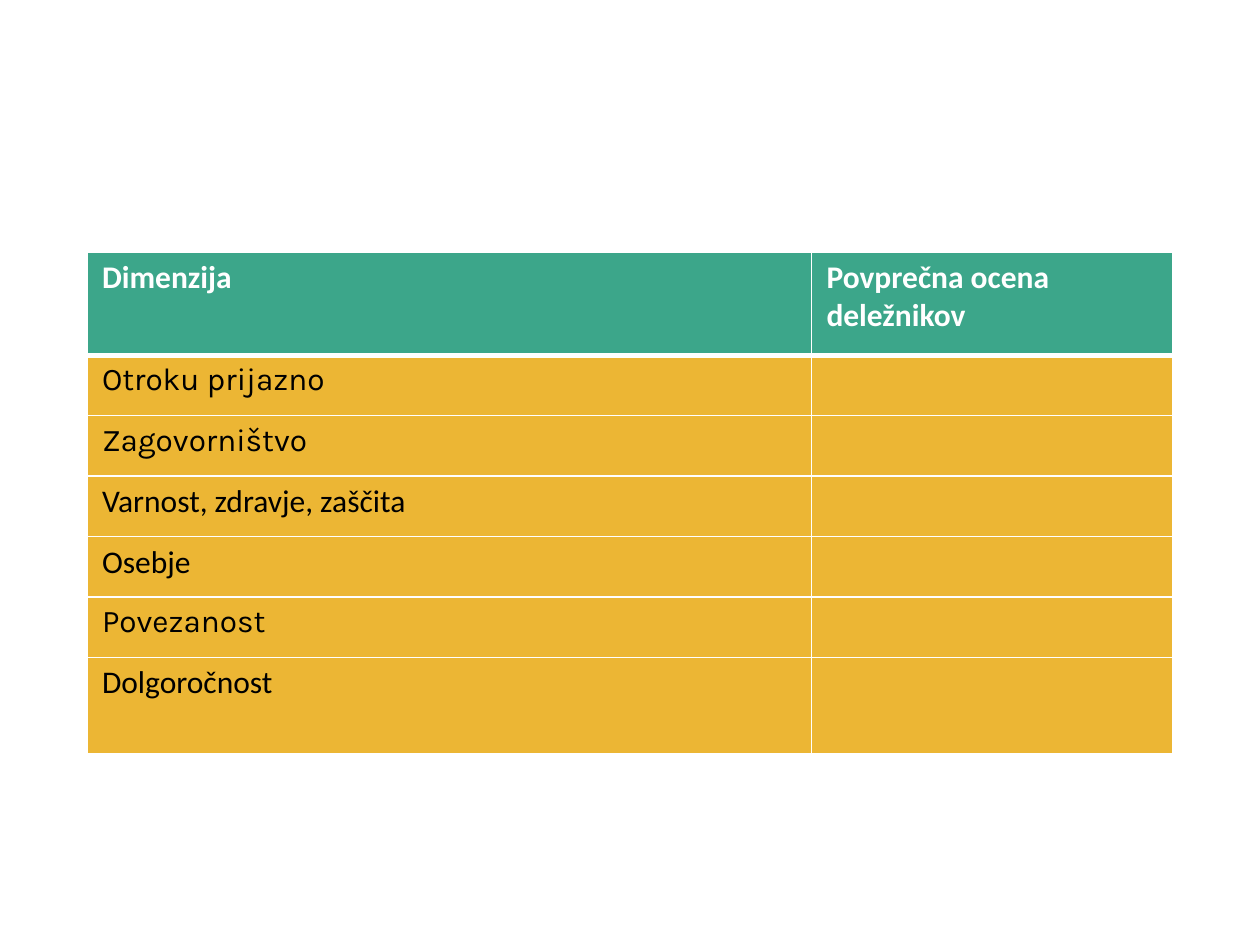
from lxml import etree
from pptx import Presentation
from pptx import util as u
from pptx.dml.color import RGBColor
from pptx.oxml import ns

WHITE = RGBColor(0xFF, 0xFF, 0xFF)
BLACK = RGBColor(0, 0, 0)
GREEN = RGBColor(0x3C, 0xA6, 0x8A)
AMBER = RGBColor(0xEC, 0xB6, 0x34)


def write(cell, words, face="Calibri", color=BLACK, bold=False):
    para = cell.text_frame.paragraphs[0]
    para.text = words
    para.font.name = face
    para.font.size = u.Pt(18)
    para.font.bold = bold
    para.font.color.rgb = color
    for run in para.runs:
        run.font.name = face
        run.font.size = u.Pt(18)
        run.font.bold = bold
        run.font.color.rgb = color


def edge(cell, side, width):
    props = cell._tc.get_or_add_tcPr()
    line = etree.SubElement(props, ns.qn("a:ln" + side), w=str(u.Pt(width)))
    fill = etree.SubElement(line, ns.qn("a:solidFill"))
    etree.SubElement(fill, ns.qn("a:srgbClr"), val=str(WHITE))


# Slide
deck = Presentation()
deck.slide_width, deck.slide_height = u.Inches(10), u.Inches(7.5)
slide = deck.slides.add_slide(deck.slide_layouts[6])

# Rows: dimension, rating, font
rows = [
    ("Dimenzija", "Povprečna ocena deležnikov", "Calibri"),
    ("Otroku prijazno", "", "Karla"),
    ("Zagovorništvo", "", "Karla"),
    ("Varnost, zdravje, zaščita", "", "Calibri"),
    ("Osebje", "", "Calibri"),
    ("Povezanost", "", "Karla"),
    ("Dolgoročnost", "", "Calibri"),
]
widths = [5.75, 2.87]
heights = [0.82] + [0.48] * 5 + [0.76]

# Table grid
table = slide.shapes.add_table(
    len(rows), len(widths), u.Inches(0.69), u.Inches(2),
    u.Inches(sum(widths)), u.Inches(sum(heights))).table
for col, width in zip(table.columns, widths):
    col.width = u.Inches(width)
for row, height in zip(table.rows, heights):
    row.height = u.Inches(height)

# Cells, with a thick rule below the header
for r, (*labels, face) in enumerate(rows):
    head = r == 0
    for c, label in enumerate(labels):
        cell = table.cell(r, c)
        cell.margin_left = cell.margin_right = u.Inches(0.12)
        cell.margin_top = cell.margin_bottom = u.Inches(0.05)
        for side in "LRTB":
            thick = (r, side) in ((0, "B"), (1, "T"))
            edge(cell, side, 3 if thick else 1)
        cell.fill.solid()
        cell.fill.fore_color.rgb = GREEN if head else AMBER
        write(cell, label, face=face, color=WHITE if head else BLACK, bold=head)

deck.save("out.pptx")
